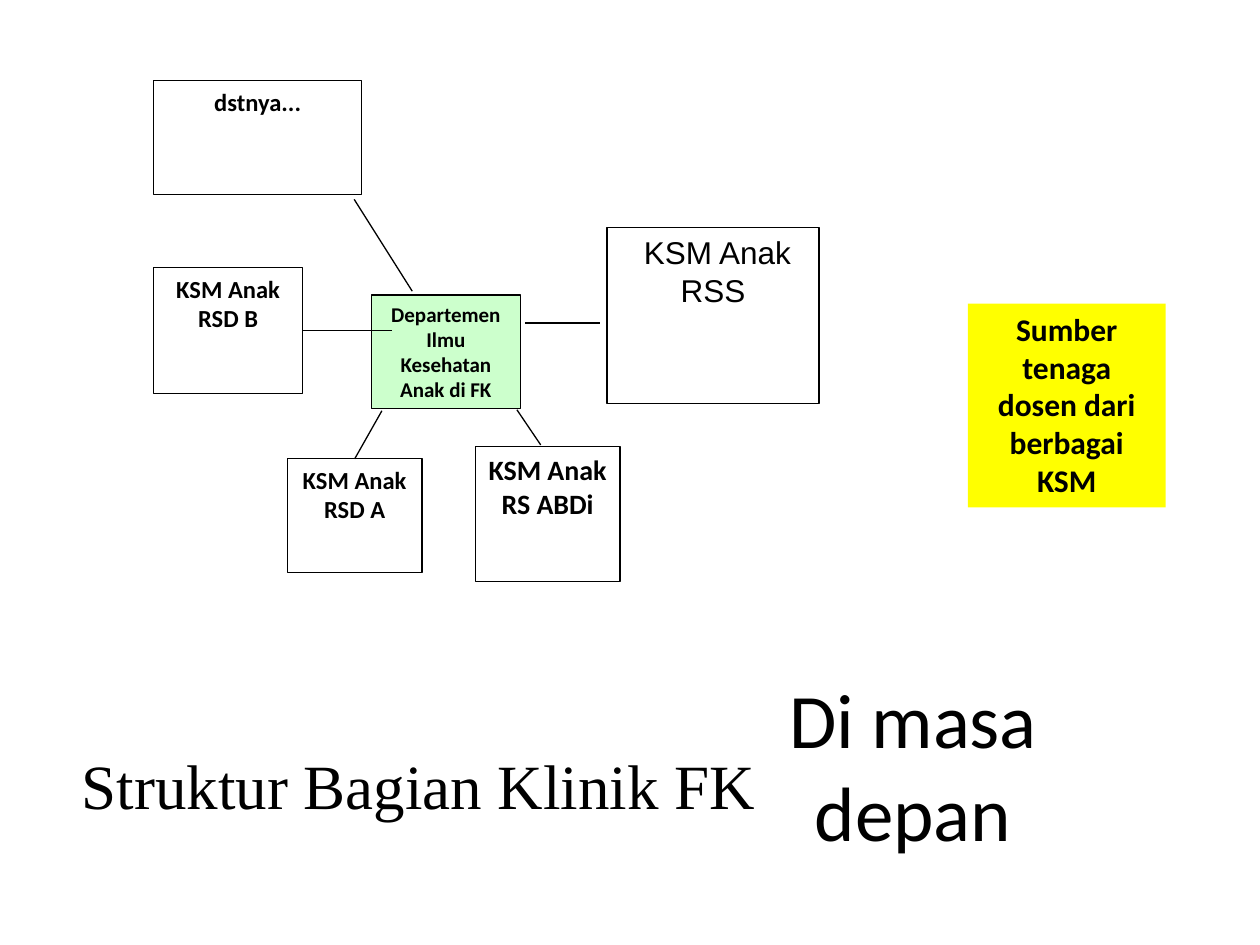
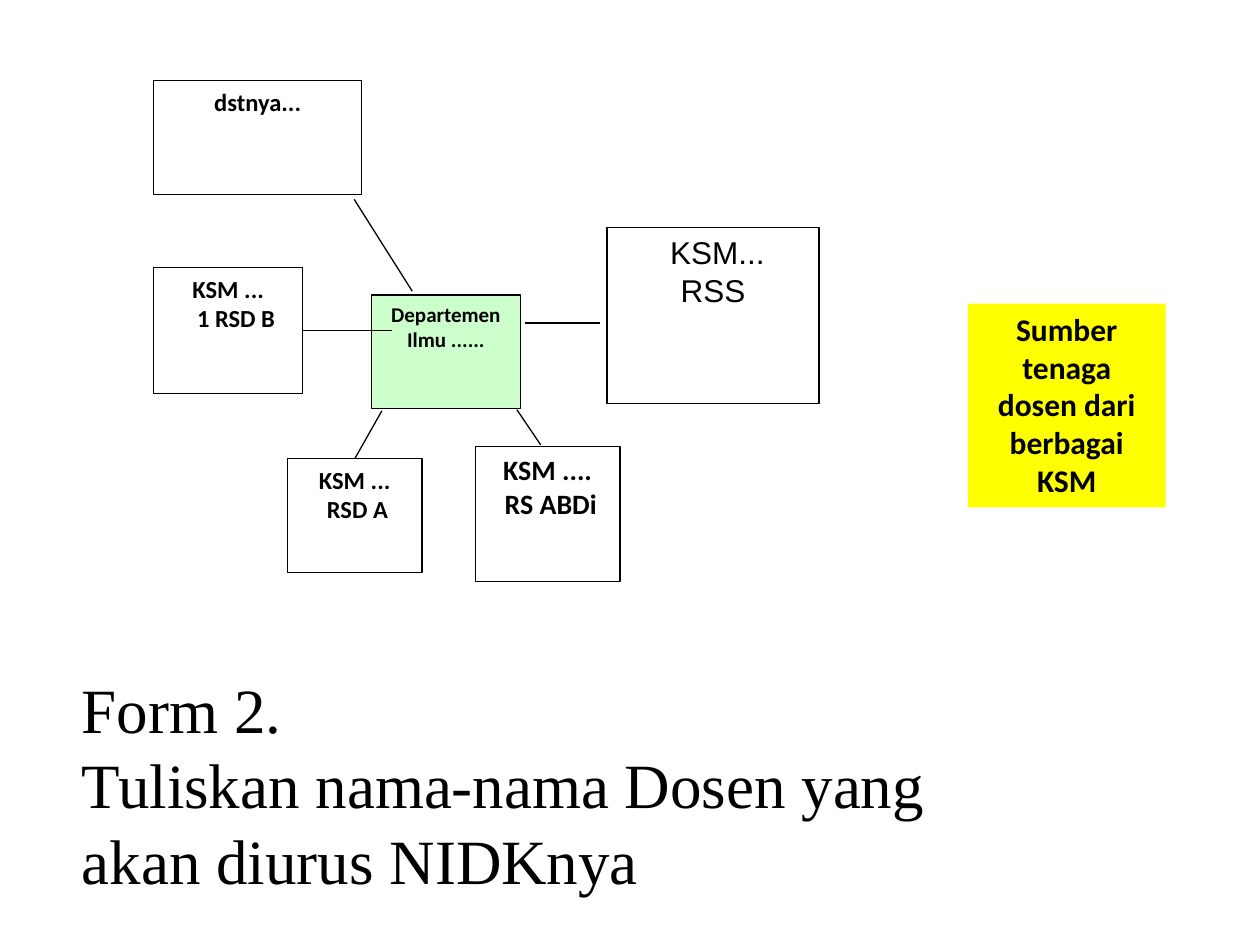
from collections import namedtuple
from dataclasses import dataclass

from lxml.etree import SubElement
from pptx import Presentation
from pptx.dml.color import RGBColor
from pptx.enum.shapes import MSO_CONNECTOR, MSO_SHAPE
from pptx.enum.text import MSO_ANCHOR, PP_ALIGN
from pptx.oxml.ns import qn
from pptx.util import Cm, Pt


@dataclass(frozen=True)
class Theme:
    ink: RGBColor = RGBColor(0x00, 0x00, 0x00)
    paper: RGBColor = RGBColor(0xFF, 0xFF, 0xFF)
    department: RGBColor = RGBColor(0xCC, 0xFF, 0xCC)
    highlight: RGBColor = RGBColor(0xFF, 0xFF, 0x00)
    body_font: str = "Calibri"
    plain_font: str = "Arial"
    caption_font: str = "Times New Roman"
    department_size: int = 12
    unit_size: int = 14
    teaching_size: int = 16
    large_size: int = 18
    caption_size: int = 36
    title_size: int = 44
    line_width: float = 0.75


THEME = Theme()
Box = namedtuple("Box", "left top width height")
Style = namedtuple("Style", "font size bold fill")

DIAGRAM = Box(3.1, 1.63, 13.41, 10.08)
SOURCE_NOTE = Box(19.51, 6.12, 3.99, 4.11)
TITLE = Box(15.49, 12.93, 5.84, 4.95)
STRUCTURE_CAPTION = Box(1.4, 14.86, 18.47, 3.84)
FORM_CAPTION = Box(1.4, 13.31, 18.47, 6.93)
CAPTION_BOTTOM_INSET = 2.08

UNIT_STYLE = Style(THEME.body_font, THEME.unit_size, True, THEME.paper)
NOTE_STYLE = Style(THEME.body_font, THEME.large_size, True, THEME.highlight)
TITLE_STYLE = Style(THEME.body_font, THEME.title_size, False, None)
CAPTION_STYLE = Style(THEME.caption_font, THEME.caption_size, False, None)

UNITS = {
    "department": (
        Box(4.39, 4.32, 3, 2.29),
        Style(THEME.body_font, THEME.department_size, True, THEME.department),
    ),
    "others": (Box(0, 0, 4.19, 2.29), UNIT_STYLE),
    "main": (
        Box(9.14, 2.95, 4.27, 3.56),
        Style(THEME.plain_font, THEME.large_size, False, THEME.paper),
    ),
    "district_b": (Box(0, 3.76, 3, 2.54), UNIT_STYLE),
    "district_a": (Box(2.69, 7.62, 2.72, 2.29), UNIT_STYLE),
    "teaching": (
        Box(6.48, 7.37, 2.92, 2.72),
        Style(THEME.body_font, THEME.teaching_size, True, THEME.paper),
    ),
}

FREE_LINKS = [
    ((5.21, 4.24), (4.04, 2.39)),
    ((7.49, 4.88), (8.99, 4.88)),
    ((7.32, 6.63), (7.8, 7.34)),
]
JOINED_LINKS = [
    ("district_b", 3, (4.8, 5.03)),
    ("district_a", 0, (4.6, 6.65)),
]

CURRENT_LABELS = {
    "department": ["Departemen Ilmu Kesehatan Anak di FK"],
    "others": ["dstnya..."],
    "main": [" KSM Anak RSS"],
    "district_b": ["KSM Anak RSD B"],
    "district_a": ["KSM Anak RSD A"],
    "teaching": ["KSM Anak RS ABDi"],
}
FORM_LABELS = {
    "department": ["Departemen Ilmu ......"],
    "others": ["dstnya..."],
    "main": [" KSM...", "RSS"],
    "district_b": ["KSM ...", "1 RSD B"],
    "district_a": ["KSM ...", " RSD A"],
    "teaching": ["KSM ....", " RS ABDi"],
}


def lengths(box):
    return [Cm(value) for value in box]


def write_text(shape, lines, style, alignment):
    frame = shape.text_frame
    frame.word_wrap = True
    frame.text = "\n".join(lines)
    for paragraph in frame.paragraphs:
        paragraph.alignment = alignment
        paragraph.font.name = style.font
        paragraph.font.size = Pt(style.size)
        paragraph.font.bold = style.bold
        paragraph.font.color.rgb = THEME.ink


def add_panel(slide, box, lines, style, outlined=True):
    shape = slide.shapes.add_shape(MSO_SHAPE.RECTANGLE, *lengths(box))
    shape.shadow.inherit = False
    shape.fill.solid()
    shape.fill.fore_color.rgb = style.fill
    if outlined:
        shape.line.color.rgb = THEME.ink
        shape.line.width = Pt(THEME.line_width)
    else:
        shape.line.fill.background()
    shape.text_frame.vertical_anchor = MSO_ANCHOR.TOP
    write_text(shape, lines, style, PP_ALIGN.CENTER)
    return shape


def add_text(slide, box, lines, style, alignment):
    shape = slide.shapes.add_textbox(*lengths(box))
    shape.text_frame.vertical_anchor = MSO_ANCHOR.MIDDLE
    write_text(shape, lines, style, alignment)
    return shape


def add_link(slide, box, start, end):
    points = [Cm(value) for x, y in (start, end) for value in (box.left + x, box.top + y)]
    connector = slide.shapes.add_connector(MSO_CONNECTOR.STRAIGHT, *points)
    connector.line.color.rgb = THEME.ink
    connector.line.width = Pt(THEME.line_width)
    SubElement(connector._element.spPr, qn("a:effectLst"))
    return connector


def add_diagram(slide, box, labels):
    panels = {}
    for name, (place, style) in UNITS.items():
        panel_box = place._replace(left=box.left + place.left, top=box.top + place.top)
        panels[name] = add_panel(slide, panel_box, labels[name], style)
    for start, end in FREE_LINKS:
        add_link(slide, box, start, end)
    for name, side, end in JOINED_LINKS:
        add_link(slide, box, end, end).begin_connect(panels[name], side)
    return panels


def add_source_note(slide, box):
    add_panel(slide, box, ["Sumber tenaga dosen dari berbagai KSM"], NOTE_STYLE, outlined=False)


def add_caption(slide, box, lines):
    caption = add_text(slide, box, lines, CAPTION_STYLE, PP_ALIGN.LEFT)
    caption.text_frame.margin_bottom = Cm(CAPTION_BOTTOM_INSET)


def add_structure_slide(presentation, labels, caption_box, caption_lines):
    slide = presentation.slides.add_slide(presentation.slide_layouts[6])
    panels = add_diagram(slide, DIAGRAM, labels)
    add_caption(slide, caption_box, caption_lines)
    add_source_note(slide, SOURCE_NOTE)
    return slide, panels


def main():
    presentation = Presentation()
    presentation.slide_width = Cm(25.4)
    presentation.slide_height = Cm(19.05)

    slide, _ = add_structure_slide(
        presentation, CURRENT_LABELS, STRUCTURE_CAPTION, ["Struktur Bagian Klinik FK"]
    )
    add_text(slide, TITLE, ["Di masa depan"], TITLE_STYLE, PP_ALIGN.CENTER)

    _, panels = add_structure_slide(
        presentation,
        FORM_LABELS,
        FORM_CAPTION,
        ["Form 2.", "Tuliskan nama-nama Dosen yang akan diurus NIDKnya"],
    )
    second_line = panels["district_b"].text_frame.paragraphs[1]
    second_line._p.get_or_add_pPr().set("marL", str(Cm(0.32)))

    presentation.save("out.pptx")


if __name__ == "__main__":
    main()
